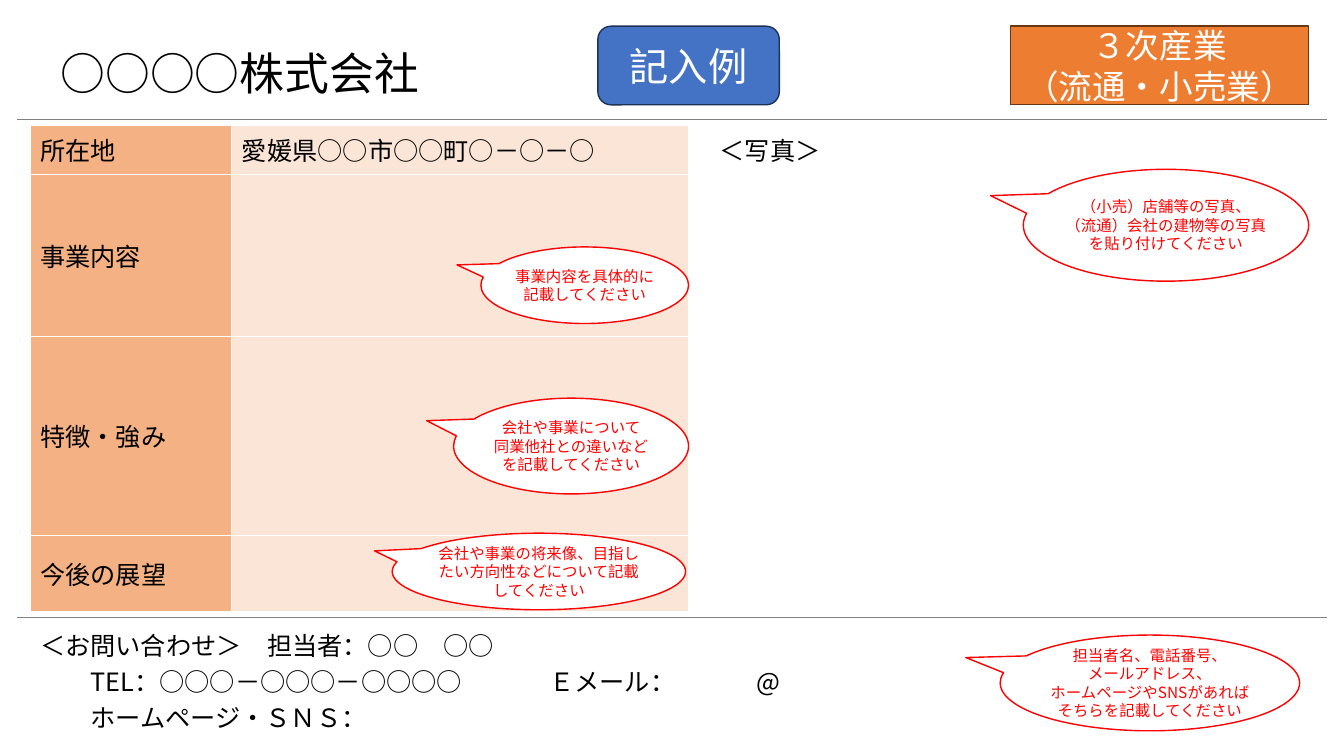
from dataclasses import dataclass

from lxml import etree
from pptx import Presentation
from pptx.dml.color import RGBColor
from pptx.enum.shapes import MSO_CONNECTOR, MSO_SHAPE
from pptx.enum.text import MSO_ANCHOR, MSO_AUTO_SIZE, PP_ALIGN
from pptx.oxml.ns import qn
from pptx.util import Inches, Pt

LEFT, CENTER = PP_ALIGN.LEFT, PP_ALIGN.CENTER
MIDDLE = MSO_ANCHOR.MIDDLE
GROW, FIXED = MSO_AUTO_SIZE.SHAPE_TO_FIT_TEXT, MSO_AUTO_SIZE.NONE
RECTANGLE, ROUNDED = MSO_SHAPE.RECTANGLE, MSO_SHAPE.ROUNDED_RECTANGLE
CALLOUT = MSO_SHAPE.OVAL_CALLOUT
STRAIGHT = MSO_CONNECTOR.STRAIGHT
TITLE_ONLY = 5


@dataclass(frozen=True)
class Theme:
    font: str = "Noto Sans CJK JP"
    ink: str = "000000"
    white: str = "FFFFFF"
    rule: str = "808080"
    orange: str = "ED7D31"
    orange_edge: str = "683715"
    blue: str = "4472C4"
    blue_edge: str = "1E3256"
    red: str = "FF0000"
    label_fill: str = "F4B183"
    entry_fill: str = "FBE5D6"
    title_size: int = 32
    sample_size: int = 28
    badge_size: int = 24
    body_size: int = 18
    hint_size: int = 11


class ProfilePage:
    def __init__(self, deck, theme):
        self.theme = theme
        self.page = deck.slides.add_slide(deck.slide_layouts[TITLE_ONLY])

    def fill_text(self, frame, lines, size, color, align=LEFT, spacing=None, tabs=()):
        frame.word_wrap = True
        for index, line in enumerate(lines):
            para = frame.paragraphs[0] if index == 0 else frame.add_paragraph()
            para.alignment = align
            if spacing:
                para.line_spacing = spacing
            if tabs:
                stops = etree.SubElement(para._p.get_or_add_pPr(), qn("a:tabLst"))
                for stop in tabs:
                    etree.SubElement(stops, qn("a:tab"), pos=str(Inches(stop)), algn="l")
            span = para.add_run()
            span.text = line
            span.font.size = Pt(size)
            span.font.name = self.theme.font
            span.font.color.rgb = RGBColor.from_string(color)
            etree.SubElement(span._r.get_or_add_rPr(), qn("a:ea"), typeface=self.theme.font)

    def title(self, text, left, top, width, height):
        box = self.page.shapes.title
        box.left, box.top = Inches(left), Inches(top)
        box.width, box.height = Inches(width), Inches(height)
        frame = box.text_frame
        frame.vertical_anchor = MIDDLE
        frame.auto_size = FIXED
        self.fill_text(frame, [text], self.theme.title_size, self.theme.ink, spacing=0.9)

    def rule(self, top):
        line = self.page.shapes.add_connector(
            STRAIGHT, Inches(0.17), Inches(top), Inches(13.16), Inches(top))
        line.line.color.rgb = RGBColor.from_string(self.theme.rule)
        line.line.width = Pt(0.5)
        etree.SubElement(line._element.spPr, qn("a:effectLst"))

    def text(self, lines, left, top, width, height, tabs=()):
        box = self.page.shapes.add_textbox(
            Inches(left), Inches(top), Inches(width), Inches(height))
        self.fill_text(box.text_frame, lines, self.theme.body_size, self.theme.ink,
                       spacing=1.2, tabs=tabs)
        box.text_frame.auto_size = GROW

    def shape(self, kind, place, lines, size, fill, edge, color):
        box = self.page.shapes.add_shape(kind, *map(Inches, place))
        box.shadow.inherit = False
        box.fill.solid()
        box.fill.fore_color.rgb = RGBColor.from_string(fill)
        box.line.color.rgb = RGBColor.from_string(edge)
        box.line.width = Pt(1)
        box.text_frame.vertical_anchor = MIDDLE
        self.fill_text(box.text_frame, lines, size, color, CENTER)
        return box

    def hint(self, lines, place, tail=(-0.615, -0.265)):
        theme = self.theme
        box = self.shape(CALLOUT, place, lines, theme.hint_size,
                         theme.white, theme.red, theme.red)
        box.adjustments[0], box.adjustments[1] = tail
        frame = box.text_frame
        frame.margin_left = frame.margin_right = 0
        frame.margin_top = frame.margin_bottom = 0

    def table(self, rows, heights, widths, left, top):
        theme = self.theme
        grid = self.page.shapes.add_table(
            len(rows), len(widths), Inches(left), Inches(top),
            Inches(sum(widths)), Inches(sum(heights))).table
        grid.first_row = grid.horz_banding = False
        for column, width in zip(grid.columns, widths):
            column.width = Inches(width)
        for row, height, texts in zip(grid.rows, heights, rows):
            row.height = Inches(height)
            for cell, text, fill in zip(row.cells, texts, (theme.label_fill, theme.entry_fill)):
                cell.vertical_anchor = MIDDLE
                if text:
                    self.fill_text(cell.text_frame, [text], theme.body_size, theme.ink)
                self.borders(cell)
                cell.fill.solid()
                cell.fill.fore_color.rgb = RGBColor.from_string(fill)

    def borders(self, cell):
        properties = cell._tc.get_or_add_tcPr()
        for side in ("a:lnL", "a:lnR", "a:lnT", "a:lnB"):
            edge = etree.SubElement(properties, qn(side), w=str(Pt(1)))
            paint = etree.SubElement(edge, qn("a:solidFill"))
            etree.SubElement(paint, qn("a:srgbClr"), val=self.theme.white)


def main():
    deck = Presentation()
    deck.slide_width, deck.slide_height = Inches(13.33), Inches(7.5)
    theme = Theme()
    profile = ProfilePage(deck, theme)

    profile.title("○○○○株式会社", 0.5, 0.26, 9.19, 0.98)
    for top in (1.18, 6.12):
        profile.rule(top)
    profile.text(["＜お問い合わせ＞　担当者：○○　○○",
                  "\tTEL：○○○－○○○－○○○○\tＥメール：\t@",
                  "\tホームページ・ＳＮＳ："],
                 0.3, 6.14, 12.68, 1.17, tabs=(0.5, 5.05, 7.1))
    profile.shape(RECTANGLE, (10.02, 0.26, 2.96, 0.78), ["３次産業", "（流通・小売業）"],
                  theme.badge_size, theme.orange, theme.orange_edge, theme.white)
    profile.table([("所在地", "愛媛県○○市○○町○－○－○"),
                   ("事業内容", ""),
                   ("特徴・強み", ""),
                   ("今後の展望", "")],
                  (0.49, 1.61, 1.97, 0.76), (2, 4.53), 0.3, 1.24)
    profile.text(["＜写真＞"], 7.04, 1.23, 1.94, 0.44)
    profile.shape(ROUNDED, (5.93, 0.26, 1.8, 0.78), ["記入例"],
                  theme.sample_size, theme.blue, theme.blue_edge, theme.white)

    profile.hint(["事業内容を具体的に", "記載してください"], (4.77, 2.45, 2.06, 0.76))
    profile.hint(["会社や事業について", "同業他社との違いなど", "を記載してください"],
                 (4.5, 3.95, 2.33, 0.95))
    profile.hint(["会社や事業の将来像、目指したい方向性などについて記載してください"],
                 (3.89, 5.29, 2.91, 0.76), tail=(-0.56, -0.269))
    profile.hint(["（小売）店舗等の写真、", "（流通）会社の建物等の写真を貼り付けてください"],
                 (10.15, 1.68, 2.83, 1.11))
    profile.hint(["担当者名、電話番号、", "メールアドレス、",
                  "ホームページやSNSがあればそちらを記載してください"],
                 (9.92, 6.3, 2.97, 0.95))

    deck.save("out.pptx")


if __name__ == "__main__":
    main()
